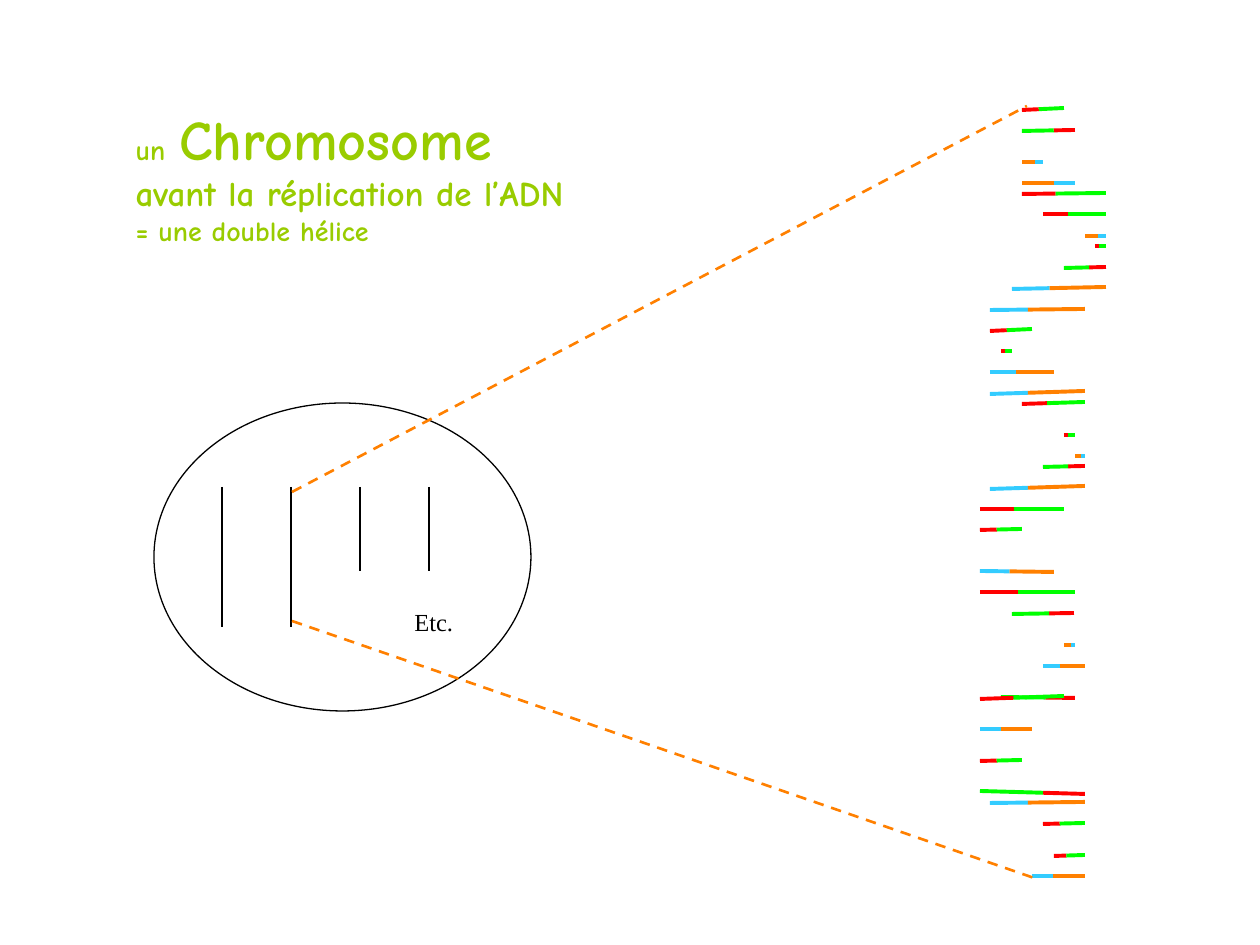
from dataclasses import dataclass
from pptx import Presentation
from pptx.dml.color import RGBColor
from pptx.enum.dml import MSO_LINE_DASH_STYLE as Dash
from pptx.enum.shapes import MSO_CONNECTOR as Connector, MSO_SHAPE as Shape
from pptx.enum.text import MSO_ANCHOR as Anchor, MSO_AUTO_SIZE as AutoSize, PP_ALIGN as Align
from pptx.oxml.ns import qn
from pptx.util import Emu, Pt

PX = 914400 // 126


@dataclass(frozen=True)
class Theme:
    display: str = "Comic Neue"
    serif: str = "Times New Roman"
    paper: str = "FFFFFF"
    ink: str = "000000"
    heading: str = "99CC00"
    zoom: str = "FF8000"
    big: int = 32
    gap: int = 24
    medium: int = 20
    small: int = 16
    label: int = 14
    outline: float = 0.75
    chromosome: float = 1
    dashes: float = 1.5
    rung: float = 2.25


THEME = Theme()

# Content: each title line is a list of (text, size, bold)
TITLE = [
    [("un", THEME.small, True), (" ", THEME.gap, False), ("Chromosome", THEME.big, True)],
    [("avant la réplication de l’ADN", THEME.medium, True)],
    [("= une double hélice", THEME.small, True)],
]
TITLE_BOX = (123, 98, 1085, 164)
NUCLEUS = (154, 403, 377, 308)
ETC, ETC_BOX = "Etc.", (402, 601, 64, 42)

CHROMOSOME_LEFT, CHROMOSOME_GAP, CHROMOSOME_TOP = 222, 69, 487
CHROMOSOME_LENGTHS = [140, 140, 84, 84]
ZOOM_LINES = [(292, 492, 1027, 106), (292, 621, 1037, 879)]

# Base pairs: the first base takes the first part of the rung
PAIR_COLORS = {"AT": ("FF0000", "00FF00"), "GC": ("33CCFF", "FF8000")}
FIRST_BASE_SHARE = 0.4
RUNGS = [  # pair, start x, start y, end x, end y
    ("AT", 1022, 110, 1064, 108), ("AT", 1075, 130, 1022, 131),
    ("GC", 1043, 162, 1022, 162), ("GC", 1075, 183, 1022, 183),
    ("AT", 1022, 194, 1106, 193), ("AT", 1043, 214, 1106, 214),
    ("GC", 1106, 236, 1085, 236), ("AT", 1095, 246, 1106, 246),
    ("AT", 1106, 267, 1064, 268), ("GC", 1012, 289, 1106, 287),
    ("GC", 990, 310, 1085, 309), ("AT", 990, 331, 1032, 329),
    ("AT", 1001, 351, 1012, 351), ("GC", 990, 372, 1054, 372),
    ("GC", 990, 394, 1085, 391), ("AT", 1022, 404, 1085, 402),
    ("AT", 1064, 435, 1075, 435), ("GC", 1085, 456, 1075, 456),
    ("AT", 1085, 466, 1043, 467), ("GC", 990, 489, 1085, 486),
    ("AT", 980, 509, 1064, 509), ("AT", 980, 530, 1022, 529),
    ("GC", 980, 571, 1054, 572), ("AT", 980, 592, 1075, 592),
    ("AT", 1074, 613, 1012, 614), ("GC", 1075, 645, 1064, 645),
    ("GC", 1043, 666, 1085, 666), ("AT", 1075, 698, 1001, 697),
    ("AT", 980, 699, 1064, 696), ("GC", 980, 729, 1032, 729),
    ("AT", 980, 761, 1022, 760), ("AT", 1085, 794, 980, 791),
    ("GC", 990, 803, 1085, 802), ("AT", 1043, 824, 1085, 823),
    ("AT", 1054, 856, 1085, 855), ("GC", 1032, 876, 1085, 876),
]


def emu(*lengths):
    return [Emu(round(length * PX)) for length in lengths]


def rgb(name):
    return RGBColor.from_string(name)


def style(span, font, size, color, bold=False):
    span.font.name, span.font.size, span.font.bold = font, Pt(size), bold
    span.font.color.rgb = rgb(color)


def add_line(shapes, ends, color, width):
    line = shapes.add_connector(Connector.STRAIGHT, *emu(*ends))
    line.line.color.rgb, line.line.width = rgb(color), Pt(width)
    properties = line._element.spPr
    properties.append(properties.makeelement(qn("a:effectLst"), {}))
    return line


def add_rung(shapes, pair, x1, y1, x2, y2):
    middle = (x1 + (x2 - x1) * FIRST_BASE_SHARE, y1 + (y2 - y1) * FIRST_BASE_SHARE)
    halves = ((x1, y1, *middle), (*middle, x2, y2))
    for ends, color in zip(halves, PAIR_COLORS[pair]):
        add_line(shapes, ends, color, THEME.rung)


deck = Presentation()
deck.slide_width, deck.slide_height = emu(1260, 945)
page = deck.slides.add_slide(deck.slide_layouts[5])
page.background.fill.solid()
page.background.fill.fore_color.rgb = rgb(THEME.paper)

# Title
title = page.shapes.title
title.left, title.top, title.width, title.height = emu(*TITLE_BOX)
frame = title.text_frame
frame.auto_size, frame.vertical_anchor, frame.word_wrap = AutoSize.NONE, Anchor.TOP, True
for index, spans in enumerate(TITLE):
    para = frame.add_paragraph() if index else frame.paragraphs[0]
    para.alignment = Align.LEFT
    for text, size, bold in spans:
        span = para.add_run()
        span.text = text
        style(span, THEME.display, size, THEME.heading, bold)

# Nucleus with its chromosomes
cell = page.shapes.add_group_shape().shapes
nucleus = cell.add_shape(Shape.OVAL, *emu(*NUCLEUS))
nucleus.shadow.inherit = False
nucleus.fill.solid()
nucleus.fill.fore_color.rgb = rgb(THEME.paper)
nucleus.line.color.rgb, nucleus.line.width = rgb(THEME.ink), Pt(THEME.outline)
for index, length in enumerate(CHROMOSOME_LENGTHS):
    x = CHROMOSOME_LEFT + index * CHROMOSOME_GAP
    add_line(cell, (x, CHROMOSOME_TOP, x, CHROMOSOME_TOP + length), THEME.ink, THEME.chromosome)

# Label
label = page.shapes.add_textbox(*emu(*ETC_BOX))
label.text_frame.text = ETC
label.text_frame.word_wrap = False
style(label.text_frame.paragraphs[0].runs[0], THEME.serif, THEME.label, THEME.ink)

# Base pairs of the helix
helix = page.shapes.add_group_shape().shapes
for rung in RUNGS:
    add_rung(helix, *rung)

# Zoom from chromosome to helix
for ends in ZOOM_LINES:
    add_line(page.shapes, ends, THEME.zoom, THEME.dashes).line.dash_style = Dash.DASH

deck.save("out.pptx")
